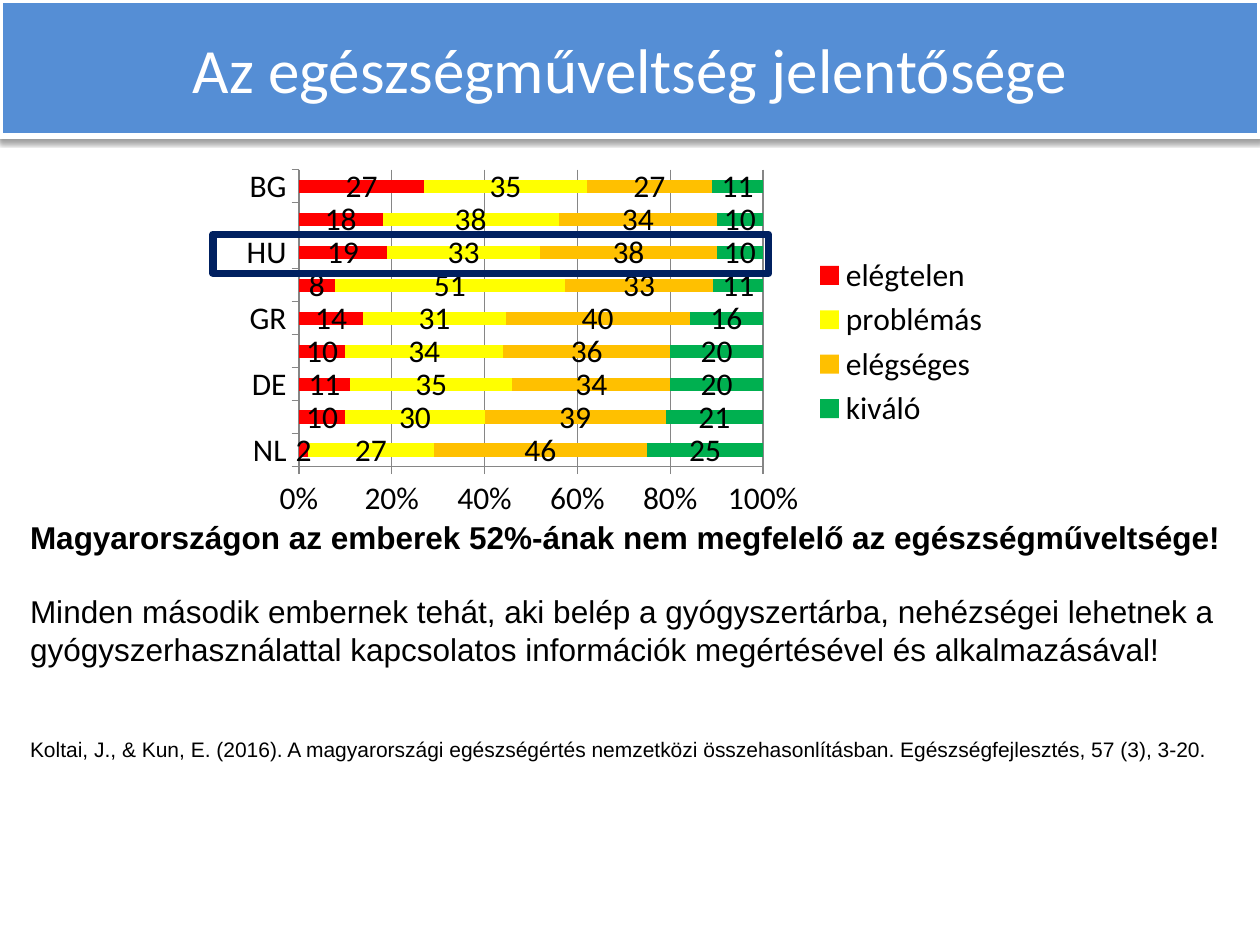
"""Build a slide on health literacy with a stacked bar chart by country."""
from dataclasses import dataclass

from lxml.etree import SubElement
from pptx import Presentation
from pptx.chart.data import CategoryChartData
from pptx.dml.color import RGBColor
from pptx.enum.chart import XL_CHART_TYPE, XL_LEGEND_POSITION, XL_TICK_MARK
from pptx.enum.shapes import MSO_SHAPE
from pptx.enum.text import MSO_ANCHOR, PP_ALIGN
from pptx.oxml import parse_xml
from pptx.oxml.ns import nsdecls, qn
from pptx.util import Inches, Pt

COLUMNS, ROWS = 100, 75
WIDTH, HEIGHT = Inches(10), Inches(7.5)
BLACK, WHITE, GREY = "000000", "FFFFFF", "868686"
COUNTRIES = ["NL", "IE", "DE", "PL", "GR", "ES", "HU", "AT", "BG"]


@dataclass(frozen=True)
class Area:
    """A rectangle in grid columns and rows."""
    column: float
    row: float
    columns: float
    rows: float

    def lengths(self) -> tuple[int, int, int, int]:
        """Return left, top, width and height."""
        return (int(WIDTH * self.column / COLUMNS), int(HEIGHT * self.row / ROWS),
                int(WIDTH * self.columns / COLUMNS), int(HEIGHT * self.rows / ROWS))


@dataclass(frozen=True)
class Level:
    """A level of health literacy, with its share in each country."""
    name: str
    color: str
    values: tuple[int, ...]


LEVELS = [
    Level("elégtelen", "FF0000", (2, 10, 11, 10, 14, 8, 19, 18, 27)),
    Level("problémás", "FFFF00", (27, 30, 35, 34, 31, 51, 33, 38, 35)),
    Level("elégséges", "FFC000", (46, 39, 34, 36, 40, 33, 38, 34, 27)),
    Level("kiváló", "00B050", (25, 21, 20, 20, 16, 11, 10, 10, 11)),
]


def rgb(color: str) -> RGBColor:
    """Return the colour for a hex string."""
    return RGBColor.from_string(color)


def style_font(font, size: float, name: str, color: str, bold: bool = False) -> None:
    """Set the look of a font."""
    font.size, font.name, font.bold = Pt(size), name, bold
    font.color.rgb = rgb(color)


def write(frame, text: str, *, size: float = 18, font: str = "Arial", color: str = BLACK,
          bold: bool = False, align=PP_ALIGN.LEFT, before: float = 0) -> None:
    """Add a paragraph, using the first one while the frame is empty."""
    paragraph = frame.add_paragraph() if frame.text else frame.paragraphs[0]
    paragraph.alignment = align
    if before:
        paragraph.space_before = Pt(before)
    run = paragraph.add_run()
    run.text = text
    style_font(run.font, size, font, color, bold)


def add_rectangle(slide, area: Area, line: str, weight: float, fill: str | None = None):
    """Draw a rectangle without a shadow."""
    shape = slide.shapes.add_shape(MSO_SHAPE.RECTANGLE, *area.lengths())
    shape.shadow.inherit = False
    if fill:
        shape.fill.solid()
        shape.fill.fore_color.rgb = rgb(fill)
    else:
        shape.fill.background()
    shape.line.color.rgb = rgb(line)
    shape.line.width = Pt(weight)
    return shape


def add_shadow(shape) -> None:
    """Cast a soft shadow straight down from a shape."""
    effects = shape._element.spPr.find(qn("a:effectLst"))
    shadow = SubElement(effects, qn("a:outerShdw"), blurRad=str(Pt(3.1)),
                        dist=str(Pt(1.6)), dir="5400000", rotWithShape="0")
    color = SubElement(shadow, qn("a:srgbClr"), val=BLACK)
    SubElement(color, qn("a:alpha"), val="38000")


def add_text_frame(slide, area: Area):
    """Add a wrapping text box and return its frame."""
    frame = slide.shapes.add_textbox(*area.lengths()).text_frame
    frame.word_wrap = True
    return frame


def place_plot(chart, x: float, y: float, w: float, h: float) -> None:
    """Fix the inner plot area as shares of the chart."""
    plot_area = chart._chartSpace.chart.plotArea
    for layout in plot_area.findall(qn("c:layout")):
        plot_area.remove(layout)
    shares = "".join(f'<c:{key} val="{value}"/>'
                     for key, value in {"x": x, "y": y, "w": w, "h": h}.items())
    plot_area.insert(0, parse_xml(
        f'<c:layout {nsdecls("c")}><c:manualLayout><c:layoutTarget val="inner"/>'
        f'<c:xMode val="edge"/><c:yMode val="edge"/>{shares}</c:manualLayout></c:layout>'))


def add_level_chart(slide, area: Area) -> None:
    """Draw the levels of each country as full-width stacked bars."""
    data = CategoryChartData()
    data.categories = COUNTRIES
    for level in LEVELS:
        data.add_series(level.name, level.values)
    chart = slide.shapes.add_chart(XL_CHART_TYPE.BAR_STACKED_100, *area.lengths(), data).chart
    style_font(chart.font, 18, "Calibri", BLACK)
    chart.has_title = False
    chart.has_legend = True
    chart.legend.position = XL_LEGEND_POSITION.RIGHT
    chart.legend.include_in_layout = False
    plot = chart.plots[0]
    plot.gap_width, plot.overlap, plot.vary_by_categories = 150, 100, False
    for series, level in zip(plot.series, LEVELS):
        series.format.fill.solid()
        series.format.fill.fore_color.rgb = rgb(level.color)
        series.data_labels.show_value = True
    for axis in (chart.category_axis, chart.value_axis):
        axis.major_tick_mark = XL_TICK_MARK.OUTSIDE
        axis.format.line.color.rgb = rgb(GREY)
    value_axis = chart.value_axis
    value_axis.major_gridlines.format.line.color.rgb = rgb(GREY)
    value_axis.tick_labels.number_format = "0%"
    value_axis.tick_labels.number_format_is_linked = False
    place_plot(chart, 0.09, 0.03, 0.6, 0.81)


def main() -> None:
    """Build and save the presentation."""
    presentation = Presentation()
    presentation.slide_width, presentation.slide_height = WIDTH, HEIGHT
    slide = presentation.slides.add_slide(presentation.slide_layouts[6])

    banner = add_rectangle(slide, Area(0, 0, 100, 10.8), WHITE, 3.75, "558ED5")
    add_shadow(banner)
    banner.text_frame.vertical_anchor = MSO_ANCHOR.MIDDLE
    write(banner.text_frame, "Az egészségműveltség jelentősége", size=36, font="Calibri",
          color=WHITE, align=PP_ALIGN.CENTER)

    citation = add_text_frame(slide, Area(1.4, 58, 100, 5))
    write(citation, "Koltai, J., & Kun, E. (2016). A magyarországi egészségértés nemzetközi "
          "összehasonlításban. Egészségfejlesztés, 57 (3), 3-20.", size=12)

    message = add_text_frame(slide, Area(1.4, 40.6, 98.8, 13.1))
    write(message, "Magyarországon az emberek 52%-ának nem megfelelő az egészségműveltsége!",
          bold=True)
    write(message, "Minden második embernek tehát, aki belép a gyógyszertárba, nehézségei "
          "lehetnek a gyógyszerhasználattal kapcsolatos információk megértésével és "
          "alkalmazásával!", before=21)

    add_level_chart(slide, Area(18.2, 12.6, 61.4, 29.1))
    add_rectangle(slide, Area(16.9, 18.6, 44.1, 3.1), "002060", 4.25)
    presentation.save("out.pptx")


if __name__ == "__main__":
    main()
